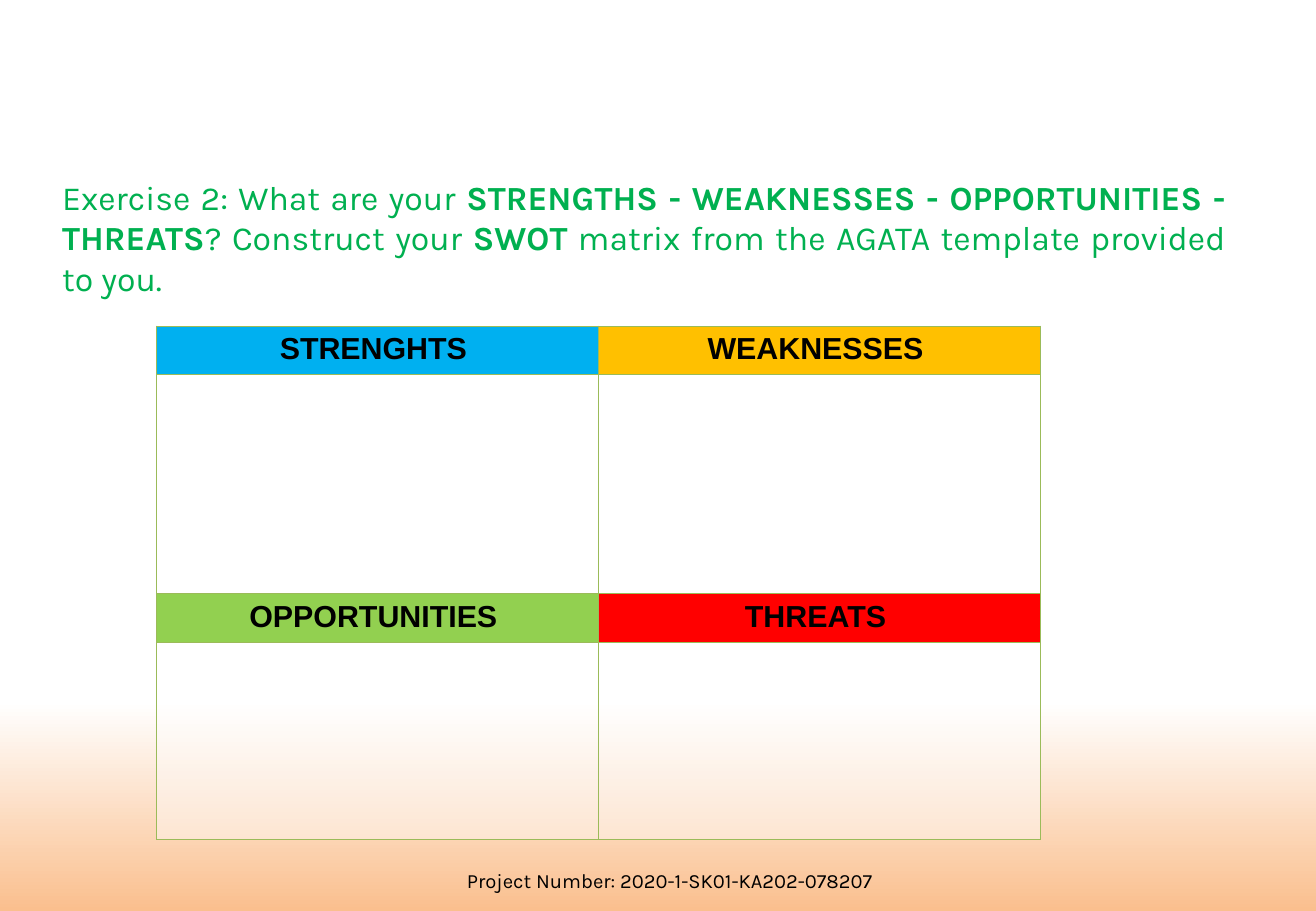
from copy import deepcopy
from dataclasses import dataclass

from lxml import etree
from pptx import Presentation
from pptx import util as u
from pptx.dml.color import RGBColor
from pptx.enum import text as t
from pptx.oxml import ns

EXERCISE = [
    ("Exercise 2: What are your ", False),
    ("STRENGTHS - WEAKNESSES - OPPORTUNITIES - THREATS", True),
    ("? Construct your ", False),
    ("SWOT", True),
    (" matrix from the AGATA template provided to you.", False),
]
MATRIX = [
    [("STRENGHTS ", "00B0F0"), ("WEAKNESSES ", "FFC000")],
    [("OPPORTUNITIES ", "92D050"), ("THREATS ", "FF0000")],
]
PROJECT = [("Project Number: 2020-1-SK01-KA202-078207", False)]


@dataclass(frozen=True)
class Theme:
    ink: str = "000000"
    exercise: str = "00B050"
    border: str = "9BBB59"
    paper: str = "FFFFFF"
    glow: str = "FABF8E"
    body_font: str = "Karla"
    matrix_font: str = "Arial"
    exercise_size: int = 20
    heading_size: int = 18
    project_size: int = 12
    border_width: float = 0.75
    paper_alpha: int = 40


THEME = Theme()
WIDTH, HEIGHT = u.Inches(10.83), u.Inches(7.5)
COLUMN = 0.336
HEADING_ROW = 0.048
ANSWER_ROWS = [0.24, 0.217]
EXERCISE_AREA = (0.038, 0.187, 0.903, 0.171)
MATRIX_AREA = (0.119, 0.358, 2 * COLUMN, 2 * HEADING_ROW + sum(ANSWER_ROWS))
PROJECT_AREA = (0.345, 0.947, 0.328, 0.04)


def area(left, top, width, height):
    return [int(share * side) for share, side in
            zip((left, top, width, height), (WIDTH, HEIGHT, WIDTH, HEIGHT))]


def write(frame, runs, size, font, color=THEME.ink, align=t.PP_ALIGN.CENTER):
    frame.word_wrap = True
    paragraph = frame.paragraphs[0]
    paragraph.alignment = align
    paragraph.space_before = u.Pt(0)
    for words, bold in runs:
        run = paragraph.add_run()
        run.text = words
        run.font.name = font
        run.font.size = u.Pt(size)
        run.font.bold = bold
        run.font.color.rgb = RGBColor.from_string(color)
    return paragraph


def add_borders(cell):
    properties = cell._tc.get_or_add_tcPr()
    for position, side in enumerate(("lnL", "lnR", "lnT", "lnB")):
        line = etree.Element(ns.qn("a:" + side), w=str(u.Pt(THEME.border_width)))
        fill = etree.SubElement(line, ns.qn("a:solidFill"))
        etree.SubElement(fill, ns.qn("a:srgbClr"), val=THEME.border)
        properties.insert(position, line)


def fill_cell(cell, color, alpha=100):
    cell.fill.solid()
    cell.fill.fore_color.rgb = RGBColor.from_string(color)
    if alpha < 100:
        tint = cell._tc.tcPr.find(".//" + ns.qn("a:srgbClr"))
        etree.SubElement(tint, ns.qn("a:alpha"), val=str(alpha * 1000))
    add_borders(cell)


def paint_background(slide):
    fill = slide.background.fill
    fill.gradient()
    fill.gradient_angle = 270
    stops = slide.background._cSld.find(".//" + ns.qn("a:gsLst"))
    stops.insert(1, deepcopy(stops[0]))
    colors = [(0, THEME.paper), (0.77, THEME.paper), (1, THEME.glow)]
    for stop, (position, color) in zip(fill.gradient_stops, colors):
        stop.position = position
        stop.color.rgb = RGBColor.from_string(color)


def add_exercise(slide):
    exercise = slide.placeholders[1]
    exercise.left, exercise.top, exercise.width, exercise.height = area(*EXERCISE_AREA)
    frame = exercise.text_frame
    frame.auto_size = t.MSO_AUTO_SIZE.NONE
    properties = frame.paragraphs[0]._p.get_or_add_pPr()
    properties.set("marL", "0")
    properties.set("indent", "0")
    etree.SubElement(properties, ns.qn("a:buNone"))
    write(frame, EXERCISE, THEME.exercise_size, THEME.body_font,
          color=THEME.exercise, align=t.PP_ALIGN.JUSTIFY)


def add_matrix(slide):
    matrix = slide.shapes.add_table(4, 2, *area(*MATRIX_AREA)).table
    matrix.first_row = matrix.horz_banding = False
    for column in matrix.columns:
        column.width = int(COLUMN * WIDTH)
    for band, (headings, answer_row) in enumerate(zip(MATRIX, ANSWER_ROWS)):
        top = 2 * band
        matrix.rows[top].height = int(HEADING_ROW * HEIGHT)
        matrix.rows[top + 1].height = int(answer_row * HEIGHT)
        for column, (heading, color) in enumerate(headings):
            cell = matrix.cell(top, column)
            write(cell.text_frame, [(heading, True)],
                  THEME.heading_size, THEME.matrix_font)
            fill_cell(cell, color)
            fill_cell(matrix.cell(top + 1, column), THEME.paper, THEME.paper_alpha)


def main():
    deck = Presentation()
    deck.slide_width, deck.slide_height = WIDTH, HEIGHT
    slide = deck.slides.add_slide(deck.slide_layouts[1])
    title = slide.shapes.title.element
    title.getparent().remove(title)
    paint_background(slide)
    project = slide.shapes.add_textbox(*area(*PROJECT_AREA))
    write(project.text_frame, PROJECT, THEME.project_size, THEME.body_font)
    add_exercise(slide)
    add_matrix(slide)
    deck.save("out.pptx")


if __name__ == "__main__":
    main()
